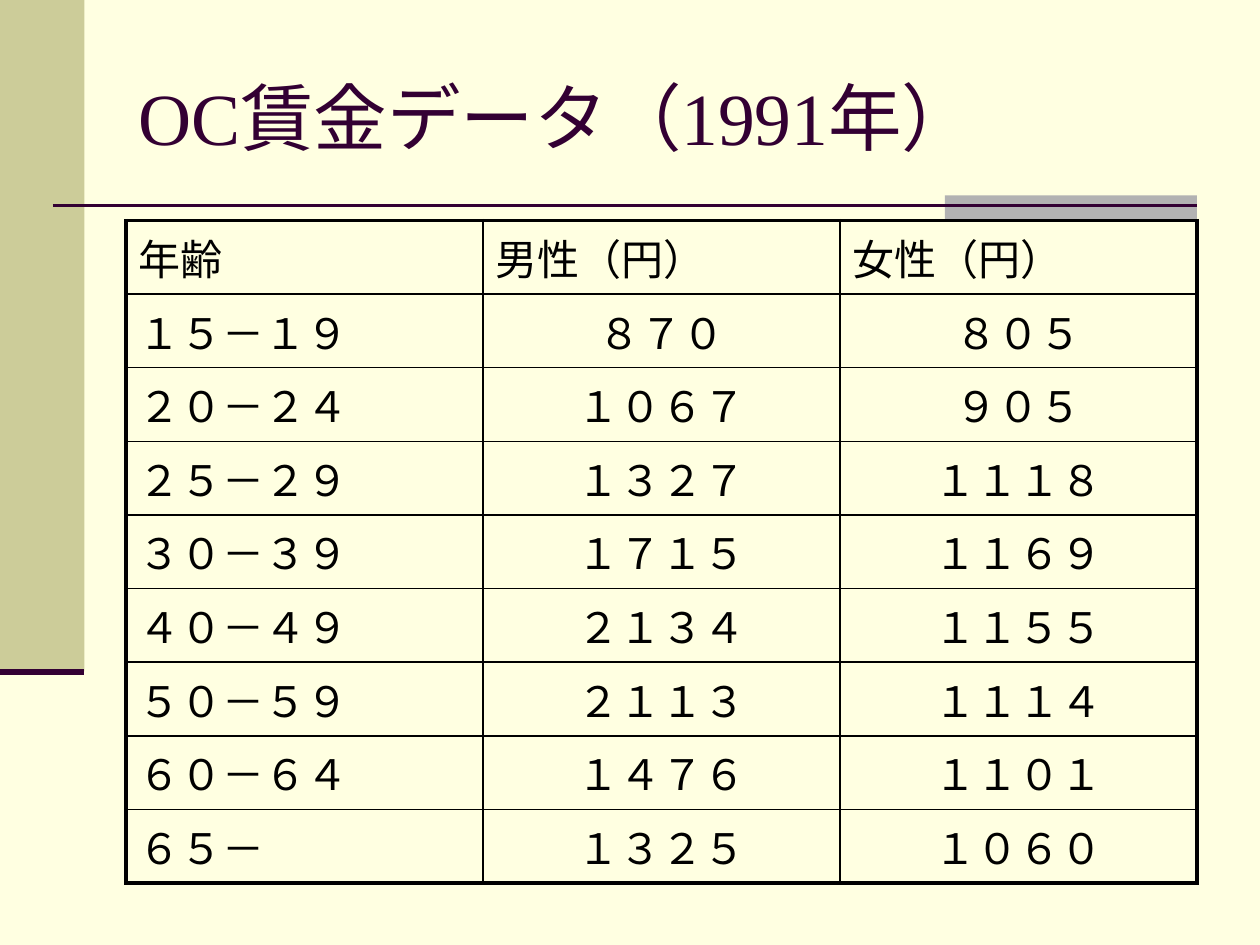
from lxml.etree import SubElement
from pptx import Presentation
from pptx.dml.color import RGBColor
from pptx.enum.lang import MSO_LANGUAGE_ID
from pptx.enum.shapes import MSO_CONNECTOR, MSO_SHAPE
from pptx.enum.text import MSO_ANCHOR, PP_ALIGN
from pptx.oxml import parse_xml
from pptx.oxml.ns import nsdecls, qn
from pptx.util import Inches, Pt

# Content
TITLE = "OC賃金データ（1991年）"
ROWS = [
    ("年齢", "男性（円）", "女性（円）"),
    ("１５－１９", "８７０", "８０５"),
    ("２０－２４", "１０６７", "９０５"),
    ("２５－２９", "１３２７", "１１１８"),
    ("３０－３９", "１７１５", "１１６９"),
    ("４０－４９", "２１３４", "１１５５"),
    ("５０－５９", "２１１３", "１１１４"),
    ("６０－６４", "１４７６", "１１０１"),
    ("６５－", "１３２５", "１０６０"),
]

# Look
HEX = {"page": "FFFFE1", "band": "CCCC99", "tab": "B2B2B2",
       "plum": "330033", "ink": "000000"}
JA = MSO_LANGUAGE_ID.JAPANESE
HEAD = {"name": "Times New Roman", "size": Pt(42), "language_id": JA}
BODY = {"name": "Arial", "size": Pt(24), "bold": False, "language_id": JA}
BARS = [("band", 0, 0, 0.67, 5.33), ("tab", 7.5, 1.55, 2, 0.2)]
LINES = [(0.42, 9.5, 1.63, 1.5), (0, 0.67, 5.33, 3.5)]
THICK, THIN = 2.25, 1


def tint(key):
    return RGBColor.from_string(HEX[key])


def write(para, text, form, key):
    run = para.add_run()
    run.text = text
    for name, value in form.items():
        setattr(run.font, name, value)
    run.font.color.rgb = tint(key)


def edge(cell, sides):
    props = cell._tc.get_or_add_tcPr()
    for i, (side, width) in enumerate(sides.items()):
        props.insert(i, parse_xml(
            f'<a:ln{side} {nsdecls("a")} w="{Pt(width)}"><a:solidFill>'
            f'<a:srgbClr val="{HEX["ink"]}"/></a:solidFill></a:ln{side}>'))


deck = Presentation()
deck.slide_width, deck.slide_height = Inches(10), Inches(7.5)
slide = deck.slides.add_slide(deck.slide_layouts[6])
slide.background.fill.solid()
slide.background.fill.fore_color.rgb = tint("page")

# Side band and grey tab
for key, *box in BARS:
    bar = slide.shapes.add_shape(MSO_SHAPE.RECTANGLE, *map(Inches, box))
    bar.shadow.inherit = False
    bar.fill.solid()
    bar.fill.fore_color.rgb = tint(key)
    bar.line.fill.background()

# Rules
for left, right, top, width in LINES:
    rule = slide.shapes.add_connector(
        MSO_CONNECTOR.STRAIGHT, *map(Inches, (left, top, right, top)))
    rule.line.color.rgb = tint("plum")
    rule.line.width = Pt(width)
    SubElement(rule._element.spPr, qn("a:effectLst"))

# Title
frame = slide.shapes.add_textbox(*map(Inches, (1, 0.3, 8.5, 1.25))).text_frame
frame.word_wrap = True
frame.vertical_anchor = MSO_ANCHOR.MIDDLE
write(frame.paragraphs[0], TITLE, HEAD, "plum")

# Wage table
last, end = len(ROWS) - 1, len(ROWS[0]) - 1
table = slide.shapes.add_table(
    last + 1, end + 1, *map(Inches, (1, 1.75, 8.5, 5.26))).table
table.first_row = table.horz_banding = False
for r, row in enumerate(ROWS):
    for c, text in enumerate(row):
        cell = table.cell(r, c)
        cell.fill.background()
        para = cell.text_frame.paragraphs[0]
        para.alignment = PP_ALIGN.CENTER if r and c else PP_ALIGN.LEFT
        write(para, text, BODY, "ink")
        outer = {"L": c == 0, "R": c == end, "T": r == 0, "B": r == last}
        edge(cell, {k: THICK if v else THIN for k, v in outer.items()})

deck.save("out.pptx")
